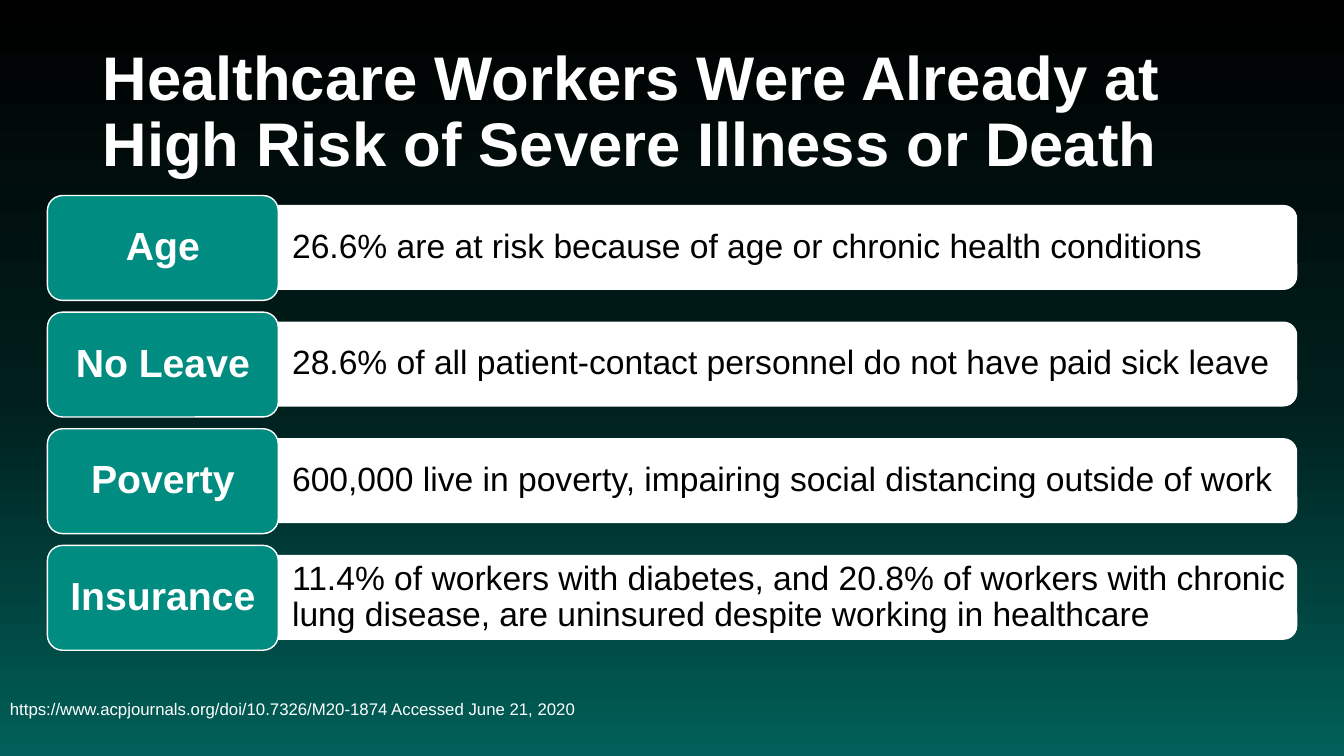
from copy import deepcopy

from pptx import Presentation
from pptx.dml.color import RGBColor
from pptx.enum import shapes, text
from pptx.oxml.ns import qn
from pptx.util import Inches, Pt

WHITE = RGBColor(0xFF, 0xFF, 0xFF)
BLACK = RGBColor(0x00, 0x00, 0x00)
DARK = RGBColor(0x00, 0x1E, 0x1C)
DEEP = RGBColor(0x00, 0x60, 0x59)
TEAL = RGBColor(0x00, 0x8C, 0x81)

RISKS = [
    ("Age", "26.6% are at risk because of age or chronic health conditions"),
    ("No Leave", "28.6% of all patient-contact personnel do not have paid sick leave"),
    ("Poverty", "600,000 live in poverty, impairing social distancing outside of work"),
    ("Insurance", "11.4% of workers with diabetes, and 20.8% of workers with chronic "
                  "lung disease, are uninsured despite working in healthcare"),
]


def write(shape, words, size, color, bold=False, align=text.PP_ALIGN.LEFT):
    frame = shape.text_frame
    frame.word_wrap = True
    frame.vertical_anchor = text.MSO_ANCHOR.MIDDLE
    para = frame.paragraphs[0]
    para.text = words
    para.alignment = align
    para.line_spacing = 0.9
    font = para.font
    font.name, font.size, font.bold = "Arial", Pt(size), bold
    font.color.rgb = color


def panel(left, top, width, height, fill, radius, pad_left, pad_right):
    """Add a rounded box with a white outline; lengths are in inches."""
    box = slide.shapes.add_shape(
        shapes.MSO_SHAPE.ROUNDED_RECTANGLE,
        Inches(left), Inches(top), Inches(width), Inches(height))
    box.adjustments[0] = radius / height
    box.shadow.inherit = False
    box.fill.solid()
    box.fill.fore_color.rgb = fill
    box.line.color.rgb = WHITE
    box.line.width = Pt(1)
    frame = box.text_frame
    frame.margin_left, frame.margin_right = Inches(pad_left), Inches(pad_right)
    frame.margin_top = frame.margin_bottom = 0
    return box


deck = Presentation()
deck.slide_width, deck.slide_height = Inches(13.33), Inches(7.5)
slide = deck.slides.add_slide(deck.slide_layouts[6])

# Background: black to deep teal, top to bottom
back = slide.background.fill
back.gradient()
back.gradient_angle = 270
stops = slide.element.find(".//" + qn("a:gsLst"))
stops.insert(1, deepcopy(stops[0]))
for stop, place, color in zip(back.gradient_stops, (0, 0.52, 1), (BLACK, DARK, DEEP)):
    stop.position = place
    stop.color.rgb = color

title = slide.shapes.add_textbox(Inches(0.92), Inches(0.4), Inches(11.5), Inches(1.45))
write(title, "Healthcare Workers Were Already at High Risk of Severe Illness or Death",
      44, WHITE, bold=True)

# One row per risk: the label overlaps the left end of its bar
for row, (label, fact) in enumerate(RISKS):
    top = 1.94 + row * 1.157
    bar = panel(2.63, top + 0.1, 10.23, 0.83, WHITE, 0.13, 0.23, 0.05)
    write(bar, fact, 24, BLACK)
    tag = panel(0.47, top, 2.29, 1.04, TEAL, 0.15, 0.1, 0.1)
    write(tag, label, 28, WHITE, bold=True, align=text.PP_ALIGN.CENTER)

source = slide.shapes.add_textbox(Inches(0), Inches(6.58), Inches(9), Inches(0.92))
write(source, "https://www.acpjournals.org/doi/10.7326/M20-1874 Accessed June 21, 2020",
      12, WHITE)

deck.save("out.pptx")
